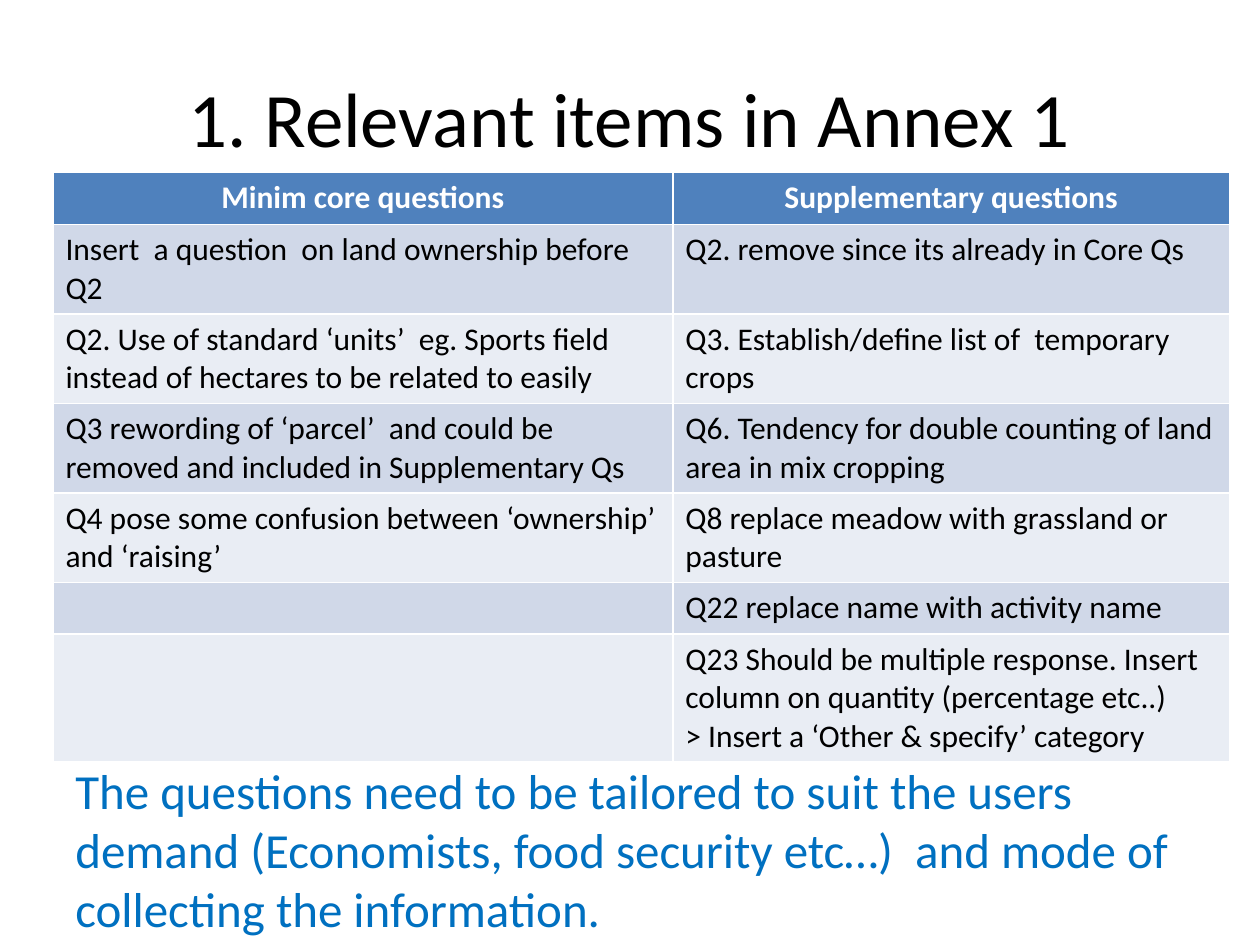
from typing import NamedTuple

from pptx import Presentation
from pptx.dml.color import RGBColor
from pptx.enum.text import MSO_ANCHOR, PP_ALIGN
from pptx.util import Inches, Pt

FONT = "Calibri"
BLACK, WHITE, BLUE = "000000", "FFFFFF", "0070C0"
HEADER_FILL = "4F81BD"
BAND_FILLS = ("D0D8E8", "E9EDF4")
COLUMN_WIDTHS = (4.92, 4.42)
ROW_HEIGHT = 0.41


class Box(NamedTuple):
    left: float
    top: float
    width: float
    height: float

    def lengths(self):
        return tuple(Inches(value) for value in self)


class QuestionRow(NamedTuple):
    core: str
    supplementary: str


HEADER = QuestionRow("Minim core questions", "Supplementary questions")
QUESTIONS = (
    QuestionRow("Insert  a question  on land ownership before Q2",
                "Q2. remove since its already in Core Qs"),
    QuestionRow("Q2. Use of standard ‘units’  eg. Sports field instead of hectares "
                "to be related to easily",
                "Q3. Establish/define list of  temporary  crops"),
    QuestionRow("Q3 rewording of ‘parcel’  and could be removed and included in "
                "Supplementary Qs",
                "Q6. Tendency for double counting of land area in mix cropping"),
    QuestionRow("Q4 pose some confusion between ‘ownership’ and ‘raising’",
                "Q8 replace meadow with grassland or pasture"),
    QuestionRow("", "Q22 replace name with activity name"),
    QuestionRow("", "Q23 Should be multiple response. Insert column on quantity "
                "(percentage etc..)\n> Insert a ‘Other & specify’ category"),
)


def rgb(color: str) -> RGBColor:
    return RGBColor.from_string(color)


def write(frame, text: str, size: float, color: str,
          align=PP_ALIGN.LEFT, bold: bool = False) -> None:
    frame.text = text
    for paragraph in frame.paragraphs:
        paragraph.alignment = align
        font = paragraph.font
        font.name, font.size, font.bold = FONT, Pt(size), bold
        font.color.rgb = rgb(color)


def add_title(slide, text: str, box: Box) -> None:
    title = slide.shapes.title
    title.left, title.top, title.width, title.height = box.lengths()
    title.text_frame.vertical_anchor = MSO_ANCHOR.MIDDLE
    write(title.text_frame, text, 44, BLACK, PP_ALIGN.CENTER)


def add_question_table(slide, left: float, top: float) -> None:
    rows = (HEADER, *QUESTIONS)
    box = Box(left, top, sum(COLUMN_WIDTHS), ROW_HEIGHT * len(rows))
    table = slide.shapes.add_table(len(rows), len(COLUMN_WIDTHS), *box.lengths()).table
    for column, width in zip(table.columns, COLUMN_WIDTHS):
        column.width = Inches(width)
    for row_index, row in enumerate(rows):
        is_header = row_index == 0
        fill = HEADER_FILL if is_header else BAND_FILLS[(row_index - 1) % 2]
        for column_index, text in enumerate(row):
            cell = table.cell(row_index, column_index)
            cell.fill.solid()
            cell.fill.fore_color.rgb = rgb(fill)
            write(cell.text_frame, text, 18, WHITE if is_header else BLACK,
                  PP_ALIGN.CENTER if is_header else PP_ALIGN.LEFT, is_header)


def add_conclusion(slide, text: str, box: Box) -> None:
    frame = slide.shapes.add_textbox(*box.lengths()).text_frame
    frame.word_wrap = True
    write(frame, text, 28, BLUE)


def main() -> None:
    presentation = Presentation()
    presentation.slide_width, presentation.slide_height = Inches(10), Inches(7.5)
    title_only = presentation.slide_layouts[5]
    slide = presentation.slides.add_slide(title_only)
    add_title(slide, "1. Relevant items in Annex 1", Box(0.5, 0.3, 9, 1.25))
    add_question_table(slide, 0.42, 1.37)
    add_conclusion(slide, "The questions need to be tailored to suit the users demand "
                   "(Economists, food security etc…)  and mode of collecting the "
                   "information.", Box(0.5, 5.99, 9.17, 1.51))
    presentation.save("out.pptx")


if __name__ == "__main__":
    main()
